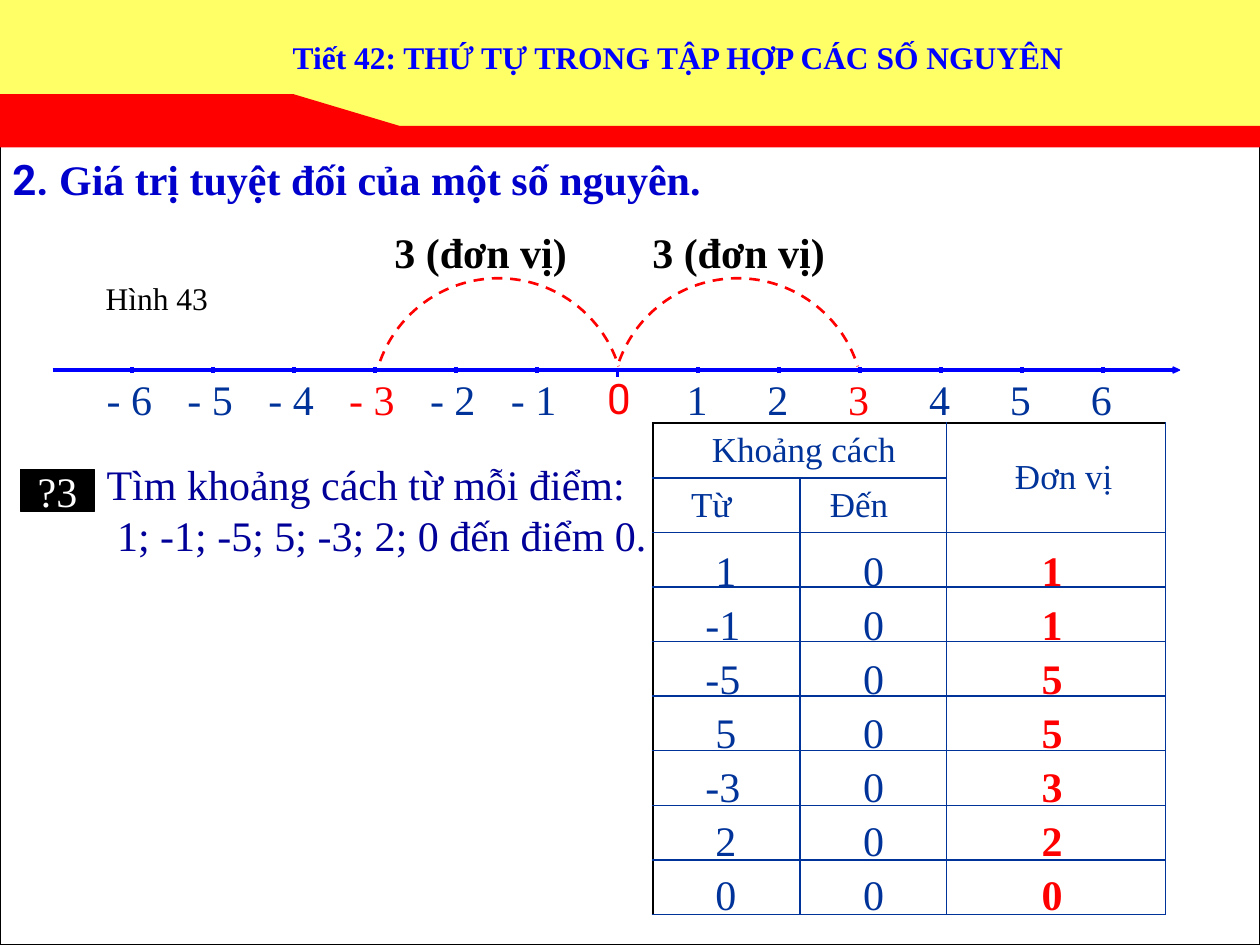
from lxml.etree import SubElement
from pptx import Presentation
from pptx.dml.color import RGBColor
from pptx.enum.dml import MSO_LINE
from pptx.enum.shapes import MSO_CONNECTOR, MSO_SHAPE
from pptx.enum.text import MSO_ANCHOR, MSO_AUTO_SIZE, PP_ALIGN
from pptx.oxml.ns import qn
from pptx.util import Cm, Pt

COLORS = {
    "white": "FFFFFF", "black": "000000", "yellow": "FFFF66", "red": "FF0000",
    "axis": "0000FF", "title": "0000FF", "heading": "0000CC",
    "ink": "003399", "task": "000099",
}
SERIF = "Times New Roman"
SANS = "Roboto"
SLIDE_WIDTH, SLIDE_HEIGHT = 25.4, 19.05
DISTANCES = [(1, 1), (-1, 1), (-5, 5), (5, 5), (-3, 3), (2, 2), (0, 0)]


def rgb(color):
    return RGBColor.from_string(COLORS[color])


def style_run(run, color, size=24, bold=False, font=SERIF):
    run.font.name = font
    run.font.size = Pt(size)
    run.font.bold = bold
    run.font.color.rgb = rgb(color)


def style_frame(frame, color, size=24, bold=False, font=SERIF):
    for paragraph in frame.paragraphs:
        for run in paragraph.runs:
            style_run(run, color, size, bold, font)


def paint(shape, fill, line=None, width=0.75):
    shape.shadow.inherit = False
    if fill:
        shape.fill.solid()
        shape.fill.fore_color.rgb = rgb(fill)
    else:
        shape.fill.background()
    if line:
        shape.line.color.rgb = rgb(line)
        shape.line.width = Pt(width)
    else:
        shape.line.fill.background()


def add_block(shapes, kind, left, top, width, height, fill, line=None, weight=0.75):
    block = shapes.add_shape(kind, Cm(left), Cm(top), Cm(width), Cm(height))
    paint(block, fill, line, weight)
    return block


def add_outline(shapes, points, fill, line=None):
    corners = [(Cm(x), Cm(y)) for x, y in points]
    builder = shapes.build_freeform(*corners[0])
    builder.add_line_segments(corners[1:])
    paint(builder.convert_to_shape(), fill, line)


def add_text(shapes, text, left, top, width, height, color, inset=True, **style):
    frame = shapes.add_textbox(Cm(left), Cm(top), Cm(width), Cm(height)).text_frame
    frame.word_wrap = True
    if not inset:
        frame.margin_left = frame.margin_right = 0
        frame.margin_top = frame.margin_bottom = 0
    frame.text = text
    style_frame(frame, color, **style)
    return frame


def add_line(shapes, x1, y1, x2, y2, width=2.25):
    line = shapes.add_connector(MSO_CONNECTOR.STRAIGHT, Cm(x1), Cm(y1), Cm(x2), Cm(y2))
    line.line.color.rgb = rgb("axis")
    line.line.width = Pt(width)
    SubElement(line._element.spPr, qn("a:effectLst"))


def add_header(slide, width, height):
    shapes = slide.shapes
    add_block(shapes, MSO_SHAPE.RECTANGLE, 0, 0, width, height - 0.25, "yellow")
    high, low = height - 1.07, height - 0.43
    add_outline(shapes, [(0, high), (5.92, high), (8.06, low), (width, low),
                         (width, height), (0, height)], "red")
    title = shapes.title
    title.left, title.top, title.width, title.height = Cm(4.88), Cm(0.64), Cm(17.58), Cm(1.27)
    frame = title.text_frame
    frame.text = "Tiết 42: THỨ TỰ TRONG TẬP HỢP CÁC SỐ NGUYÊN"
    frame.auto_size = MSO_AUTO_SIZE.NONE
    frame.vertical_anchor = MSO_ANCHOR.TOP
    frame.paragraphs[0].alignment = PP_ALIGN.CENTER
    style_frame(frame, "title", size=18, bold=True)
    shapes._spTree.append(title._element)


def add_heading(shapes, left, top, width):
    frame = add_text(shapes, "2. ", left, top, width, 1.27, "heading", bold=True, font=SANS)
    topic = frame.paragraphs[0].add_run()
    topic.text = "Giá trị tuyệt đối của một số nguyên."
    style_run(topic, "heading", bold=True)


def add_number_line(shapes, left, top, width):
    zero, step, axis = left + 11.39, 1.63, top + 3.01
    line_parts = shapes.add_group_shape().shapes
    add_line(line_parts, left, axis, left + width, axis)
    tip = left + width
    add_outline(line_parts, [(tip - 0.05, axis - 0.06), (tip + 0.08, axis),
                             (tip - 0.05, axis + 0.06)], "axis", "axis")
    for number in range(-6, 7):
        x = zero + number * step
        if number == 0:
            add_line(line_parts, x, axis - 0.04, x, axis + 0.14, 1.5)
            continue
        add_line(line_parts, x, axis + 0.06, x, axis - 0.06)
        label = f"- {-number}" if number < 0 else str(number)
        add_text(line_parts, label, x - (0.52 if number < 0 else 0.24), axis + 0.06,
                 0.98 if number < 0 else 0.5, 1.02,
                 "red" if abs(number) == 3 else "ink", inset=False)
    add_text(shapes, "0", zero - 0.46, axis - 0.07, 2.34, 1.27, "red", font=SANS)
    radius = 2.54
    for offset, label_left in ((-2.4, zero - 4.75), (2.42, zero + 0.45)):
        arc = add_block(shapes, MSO_SHAPE.ARC, zero + offset - radius, axis + 0.69 - radius,
                        2 * radius, 2 * radius, None, "red", 1.5)
        arc.line.dash_style = MSO_LINE.DASH
        arc.adjustments[0], arc.adjustments[1] = 200 * 0.6, 342.5 * 0.6
        add_text(shapes, "3 (đơn vị)", label_left, top, 4.2, 1.27, "black", bold=True)
    add_text(shapes, "Hình 43", left + 0.82, top + 1.06, 2.9, 1.02, "black", size=18)


def add_task(shapes, left, top, width):
    badge = add_block(shapes, MSO_SHAPE.RECTANGLE, left, top + 0.15, 1.48, 0.85, "black", "black")
    badge.text_frame.text = "?3"
    badge.text_frame.word_wrap = False
    badge.text_frame.vertical_anchor = MSO_ANCHOR.MIDDLE
    badge.text_frame.paragraphs[0].alignment = PP_ALIGN.CENTER
    style_frame(badge.text_frame, "white")
    question = add_text(
        shapes, "Tìm khoảng cách từ mỗi điểm:\n 1; -1; -5; 5; -3; 2; 0 đến điểm 0.",
        left + 1.48, top, width - 1.48, 2.11, "task")
    for paragraph in question.paragraphs:
        paragraph.line_spacing = 0.8
        paragraph.space_before = Pt(6)


def set_borders(cell, edges):
    properties = cell._tc.get_or_add_tcPr()
    for position, (edge, (color, width)) in enumerate(edges.items()):
        border = properties.makeelement(qn(f"a:{edge}"), {"w": str(Pt(width))})
        fill = SubElement(border, qn("a:solidFill"))
        SubElement(fill, qn("a:srgbClr"), val=COLORS[color])
        properties.insert(position, border)


def add_distance_table(shapes, left, top):
    columns, row_height = [2.97, 2.95, 4.42], 1.1
    row_count = len(DISTANCES) + 2
    table = shapes.add_table(row_count, 3, Cm(left), Cm(top), Cm(sum(columns)),
                             Cm(row_height * row_count)).table
    table.first_row = table.horz_banding = False
    for column, width in zip(table.columns, columns):
        column.width = Cm(width)
    for r, row in enumerate(table.rows):
        row.height = Cm(row_height)
        for c, cell in enumerate(row.cells):
            cell.fill.background()
            thin, thick = ("ink", 1), ("black", 1.5)
            set_borders(cell, {"lnL": thick if c == 0 else thin, "lnR": thin,
                               "lnT": thick if r == 0 else thin, "lnB": thin})
    table.cell(0, 0).merge(table.cell(0, 1))
    table.cell(0, 2).merge(table.cell(1, 2))
    for r, c, header, margin, alignment in (
            (0, 0, "Khoảng cách", 0.42, PP_ALIGN.CENTER),
            (0, 2, "Đơn vị", 0.56, PP_ALIGN.CENTER),
            (1, 0, "Từ", 0.77, PP_ALIGN.LEFT),
            (1, 1, "Đến", 0.6, PP_ALIGN.LEFT)):
        cell = table.cell(r, c)
        cell.text_frame.text = header
        cell.margin_left = Cm(margin)
        cell.vertical_anchor = MSO_ANCHOR.MIDDLE
        cell.text_frame.paragraphs[0].alignment = alignment
        style_frame(cell.text_frame, "ink", size=20)
    for index, (point, distance) in enumerate(DISTANCES):
        y = top + 2.32 + index * 1.09
        point_left = left + (0.81 if point < 0 else 1.01)
        add_text(shapes, str(point), point_left, y, 1.48, 1.27, "ink")
        add_text(shapes, "0", left + 3.99, y, 1.7, 1.27, "ink")
        add_text(shapes, str(distance), left + 7.59, y, 1.48, 1.27, "red", bold=True)


def main():
    presentation = Presentation()
    presentation.slide_width, presentation.slide_height = Cm(SLIDE_WIDTH), Cm(SLIDE_HEIGHT)
    slide = presentation.slides.add_slide(presentation.slide_layouts[5])
    shapes = slide.shapes
    add_block(shapes, MSO_SHAPE.RECTANGLE, 0, 2.12, SLIDE_WIDTH, SLIDE_HEIGHT - 2.12,
              "white", "black")
    add_header(slide, SLIDE_WIDTH, 2.97)
    add_heading(shapes, 0, 2.97, 22.66)
    add_number_line(shapes, 1.06, 4.45, 22.64)
    add_task(shapes, 0.42, 9.31, 12.91)
    add_distance_table(shapes, 13.16, 8.53)
    presentation.save("out.pptx")


if __name__ == "__main__":
    main()
